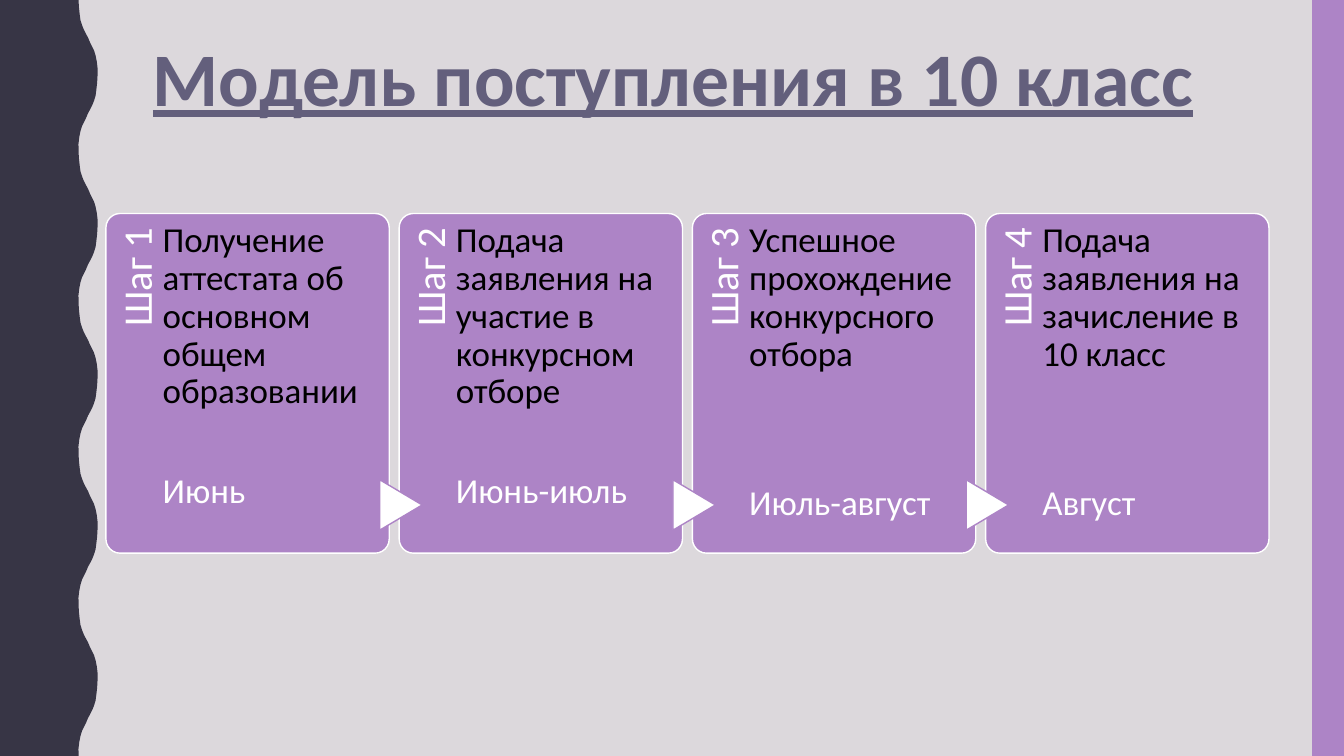
"""Builds the slide with the four steps of admission to the 10th grade."""
from pptx import Presentation
from pptx import util as u
from pptx.dml.color import RGBColor
from pptx.enum import shapes, text

BACKGROUND = RGBColor(0xDC, 0xD8, 0xDC)
DARK = RGBColor(0x37, 0x35, 0x45)
PURPLE = RGBColor(0xAD, 0x84, 0xC6)
TITLE_COLOR = RGBColor(0x63, 0x5F, 0x7C)
WHITE = RGBColor(0xFF, 0xFF, 0xFF)
BLACK = RGBColor(0, 0, 0)

HALF_WAVE = [(1.98, 0), (1.99, 0.18), (2.01, 0.36), (2.03, 0.51), (2.07, 0.64),
             (2.11, 0.74), (2.16, 0.84), (2.22, 0.95), (2.27, 1.07), (2.32, 1.17),
             (2.37, 1.27), (2.41, 1.4), (2.44, 1.55), (2.46, 1.72)]
WAVE_LEFT, WAVE_RIGHT = 1.98, 2.46
HALF_COUNT = 10
SLIDE_WIDTH, SLIDE_HEIGHT = 33.87, 19.05

CARD_LEFT, CARD_TOP, CARD_WIDTH, CARD_HEIGHT = 2.67, 5.38, 7.14, 8.56
CARD_STEP = 7.39
STEPS = [
    ("Получение аттестата об основном общем образовании", "Июнь", 44),
    ("Подача заявления на участие в конкурсном отборе", "Июнь-июль", 44),
    ("Успешное прохождение конкурсного отбора", "Июль-август", 80),
    ("Подача заявления на зачисление в 10 класс", "Август", 80),
]

LABEL_FRAME = {"word_wrap": True, "margin_left": 0, "margin_top": u.Cm(0.28),
               "margin_right": u.Cm(0.36), "margin_bottom": 0}
BODY_FRAME = {"word_wrap": True, "margin_left": 0, "margin_top": u.Cm(0.23),
              "margin_right": 0, "margin_bottom": 0}
TITLE_FRAME = {"word_wrap": False, "vertical_anchor": text.MSO_ANCHOR.TOP,
               "auto_size": text.MSO_AUTO_SIZE.SHAPE_TO_FIT_TEXT}


def paint(shape, fill, line=None):
    shape.shadow.inherit = False
    shape.fill.solid()
    shape.fill.fore_color.rgb = fill
    if line is None:
        shape.line.fill.background()
    else:
        shape.line.color.rgb = line
        shape.line.width = u.Pt(1)


def write(paragraph, words, size, color, paragraph_format, font_format):
    run = paragraph.add_run()
    run.text = words
    run.font.color.rgb = color
    for name, value in paragraph_format.items():
        setattr(paragraph, name, value)
    for name, value in {"name": "Calibri", "size": u.Pt(size), **font_format}.items():
        setattr(run.font, name, value)


presentation = Presentation()
presentation.slide_width = u.Cm(SLIDE_WIDTH)
presentation.slide_height = u.Cm(SLIDE_HEIGHT)
slide = presentation.slides.add_slide(presentation.slide_layouts[5])
slide.background.fill.solid()
slide.background.fill.fore_color.rgb = BACKGROUND

wave_points = []
for half in range(HALF_COUNT):
    for x, y in HALF_WAVE:
        wave_x = x if half % 2 == 0 else WAVE_LEFT + WAVE_RIGHT - x
        wave_y = y + half * SLIDE_HEIGHT / HALF_COUNT
        wave_points.append((u.Cm(wave_x), u.Cm(wave_y)))
wave_points += [(u.Cm(WAVE_LEFT), u.Cm(SLIDE_HEIGHT)), (0, u.Cm(SLIDE_HEIGHT))]
wave_builder = slide.shapes.build_freeform(0, 0)
wave_builder.add_line_segments(wave_points, close=True)
paint(wave_builder.convert_to_shape(), DARK)

right_band = slide.shapes.add_shape(
    shapes.MSO_SHAPE.RECTANGLE, u.Cm(33.07), 0, u.Cm(0.8), u.Cm(SLIDE_HEIGHT))
paint(right_band, PURPLE)

title = slide.shapes.title
title.left, title.top = u.Cm(3.35), u.Cm(0.64)
title.width, title.height = u.Cm(27.23), u.Cm(2.57)
for name, value in TITLE_FRAME.items():
    setattr(title.text_frame, name, value)
write(title.text_frame.paragraphs[0], "Модель поступления в 10 класс", 54, TITLE_COLOR,
      {"alignment": text.PP_ALIGN.CENTER}, {"bold": True, "underline": True})

for index, (action, month, gap) in enumerate(STEPS):
    left = CARD_LEFT + index * CARD_STEP
    card = slide.shapes.add_shape(
        shapes.MSO_SHAPE.ROUNDED_RECTANGLE,
        u.Cm(left), u.Cm(CARD_TOP), u.Cm(CARD_WIDTH), u.Cm(CARD_HEIGHT))
    card.adjustments[0] = 0.05
    paint(card, PURPLE, WHITE)

    label = slide.shapes.add_textbox(
        u.Cm(left - 2.8), u.Cm(8.18), u.Cm(7.01), u.Cm(1.42))
    label.rotation = 270
    for name, value in LABEL_FRAME.items():
        setattr(label.text_frame, name, value)
    write(label.text_frame.paragraphs[0], f"Шаг {index + 1}", 29, WHITE,
          {"alignment": text.PP_ALIGN.RIGHT, "line_spacing": 0.9}, {})

    if index > 0:
        arrow = slide.shapes.add_shape(
            shapes.MSO_SHAPE.FLOWCHART_EXTRACT,
            u.Cm(left - 0.59), u.Cm(12.19), u.Cm(1.27), u.Cm(1.07))
        arrow.rotation = 90
        paint(arrow, WHITE, PURPLE)

    body = slide.shapes.add_textbox(
        u.Cm(left + 1.43), u.Cm(CARD_TOP), u.Cm(5.31), u.Cm(CARD_HEIGHT))
    for name, value in BODY_FRAME.items():
        setattr(body.text_frame, name, value)
    write(body.text_frame.paragraphs[0], action, 25, BLACK, {"line_spacing": 0.9}, {})
    write(body.text_frame.add_paragraph(), month, 25, WHITE,
          {"line_spacing": 0.9, "space_before": u.Pt(gap)}, {})

presentation.save("out.pptx")
